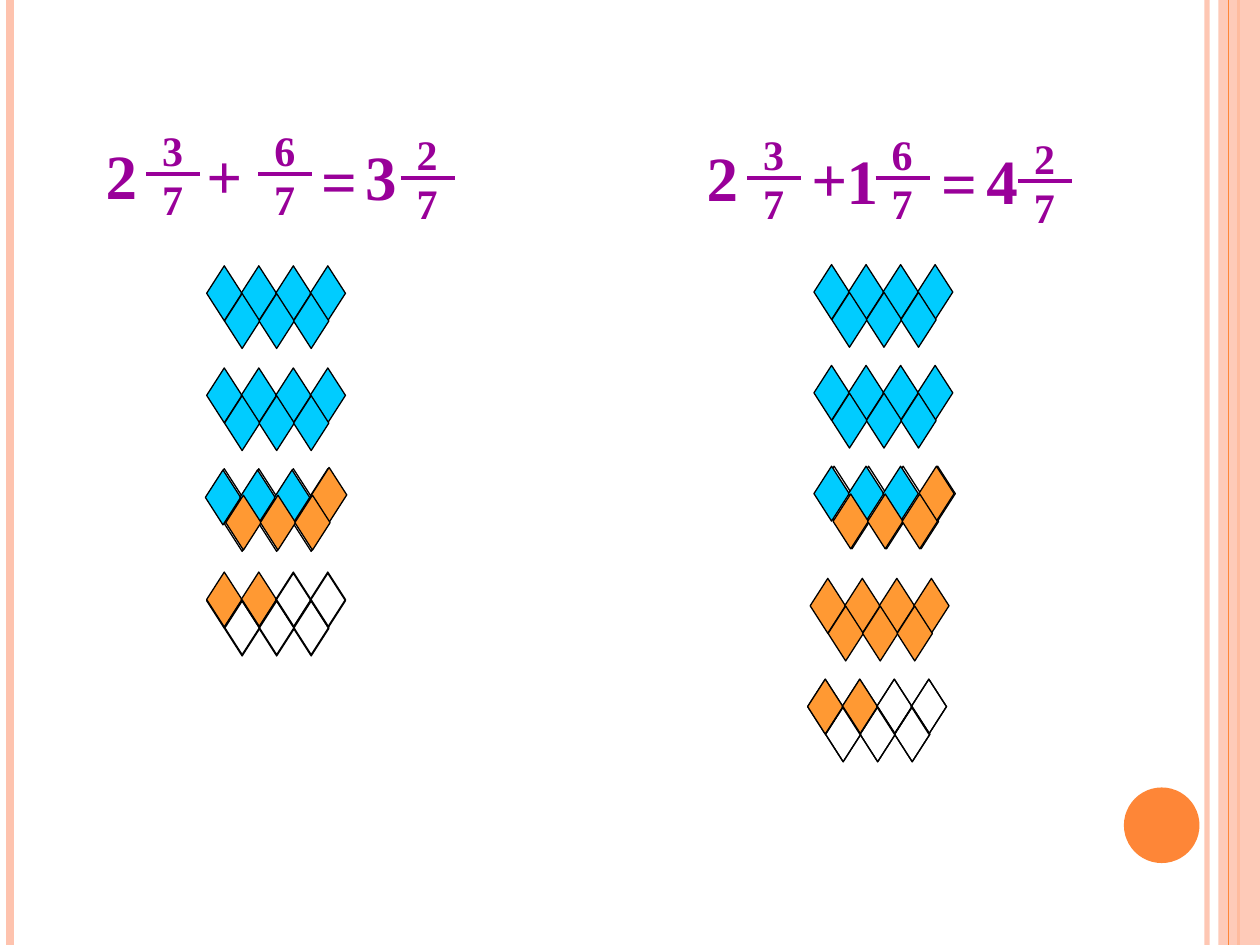
from dataclasses import dataclass
from typing import Optional

from lxml.etree import SubElement
from pptx import Presentation
from pptx.dml.color import RGBColor as Rgb
from pptx.enum.shapes import MSO_CONNECTOR as Link, MSO_SHAPE as Form
from pptx.enum.text import PP_ALIGN as Align
from pptx.oxml.ns import qn
from pptx.util import Inches, Pt

"""Draws two sums of mixed numbers on a grid of 100 columns by 75 rows."""

COLS, ROWS = 100, 75
CELL = Inches(0.1)


@dataclass(frozen=True)
class Theme:
    font: str = "Times New Roman"
    ink: str = "990099"
    edge: str = "000000"
    blue: str = "00CCFF"
    gold: str = "FF9933"
    white: str = "FFFFFF"
    pale: str = "FEC3AE"
    deep: str = "FE8637"
    big: int = 36
    small: int = 24


@dataclass(frozen=True)
class Stripe:
    col: float
    width: float
    color: str
    alpha: int = 100


@dataclass(frozen=True)
class Group:
    col: float
    row: float
    tiles: str


@dataclass(frozen=True)
class Sign:
    text: str
    col: float
    row: float
    width: float = 5.8


@dataclass(frozen=True)
class Ratio:
    top: str
    base: str
    col: float
    row: float


THEME = Theme()
FILLS = {"b": THEME.blue, "o": THEME.gold, "w": THEME.white, "-": None}

STRIPES = [
    Stripe(95.8, 3, THEME.pale, 93),
    Stripe(0.8, 4.5, THEME.pale),
    Stripe(98.3, 1.5, THEME.deep),
]
THIN = Stripe(97.5, 0.75, THEME.deep)

GROUPS = [
    Group(64.8, 37, "w" * 7),
    Group(16.4, 37.2, "w" * 7),
    Group(64.1, 53.9, "w" * 7),
    Group(16.4, 45.5, "w" * 7),
    Group(16.4, 21.1, "b" * 7),
    Group(16.4, 29.2, "b" * 7),
    Group(16.3, 37.3, "bbb"),
    Group(16.5, 37.1, "   oooo"),
    Group(16.4, 45.4, "oo-----"),
    Group(64.6, 21, "b" * 7),
    Group(64.6, 29, "b" * 7),
    Group(64.6, 37, "bbb"),
    Group(64.7, 37, "   oooo"),
    Group(64.3, 45.9, "o" * 7),
    Group(64.1, 53.9, "oo-----"),
]

SIGNS = [
    Sign("2", 7.4, 9.9),
    Sign("+", 15.4, 9.9),
    Sign("=", 24.5, 10.3, 5.1),
    Sign("3", 28, 10),
    Sign("2", 55.1, 10.1),
    Sign("+", 63.4, 10.2),
    Sign("1", 66.2, 10.3),
    Sign("=", 73.7, 10.5, 5.1),
    Sign("4", 77.3, 10.3),
]

RATIOS = [
    Ratio("3", "7", 11.6, 13.8),
    Ratio("6", "7", 20.5, 13.8),
    Ratio("2", "7", 31.8, 14.1),
    Ratio("3", "7", 59.3, 14.1),
    Ratio("6", "7", 69.5, 14.1),
    Ratio("2", "7", 80.8, 14.4),
]


def span(*cells: float) -> list[int]:
    return [round(n * CELL) for n in cells]


def fade(shape, alpha: int) -> None:
    if alpha < 100:
        tint = next(shape.element.iter(qn("a:srgbClr")))
        SubElement(tint, qn("a:alpha"), val=str(alpha * 1000))


def draw_line(slide, ends: tuple, color: str, width: float, alpha: int = 100) -> None:
    line = slide.shapes.add_connector(Link.STRAIGHT, *span(*ends))
    line.line.color.rgb = Rgb.from_string(color)
    line.line.width = Pt(width)
    fade(line, alpha)
    SubElement(line.element.spPr, qn("a:effectLst"))


def draw_form(slide, form, frame: tuple, fill: Optional[str],
              edge: Optional[str] = None, alpha: int = 100) -> None:
    shape = slide.shapes.add_shape(form, *span(*frame))
    shape.shadow.inherit = False
    if fill:
        shape.fill.solid()
        shape.fill.fore_color.rgb = Rgb.from_string(fill)
        fade(shape, alpha)
    else:
        shape.fill.background()
    if edge:
        shape.line.color.rgb = Rgb.from_string(edge)
        shape.line.width = Pt(0.75)
    else:
        shape.line.fill.background()


def draw_text(slide, text: str, frame: tuple, size: int, align=Align.LEFT) -> None:
    box = slide.shapes.add_textbox(*span(*frame)).text_frame
    box.word_wrap = True
    box.margin_top = Inches(0.09)
    para = box.paragraphs[0]
    para.text, para.alignment = text, align
    font = para.font
    font.name, font.size, font.bold = THEME.font, Pt(size), True
    font.color.rgb = Rgb.from_string(THEME.ink)


def draw_stripe(slide, stripe: Stripe) -> None:
    ends = (stripe.col, 0, stripe.col, ROWS)
    draw_line(slide, ends, stripe.color, stripe.width, stripe.alpha)


def draw_group(slide, group: Group) -> None:
    for i, tile in enumerate(group.tiles):
        if tile in FILLS:
            low, step = divmod(i, 4)
            col = group.col + 2.74 * step + 1.42 * low
            frame = (col, group.row + 2.2 * low, 2.8, 4.36)
            draw_form(slide, Form.DIAMOND, frame, FILLS[tile], THEME.edge)


def draw_ratio(slide, part: Ratio) -> None:
    col, row = part.col, part.row
    draw_text(slide, part.top, (col - 1, row - 4.8, 6.2, 5), THEME.small, Align.CENTER)
    draw_text(slide, part.base, (col - 0.7, row - 0.9, 5.6, 5), THEME.small, Align.CENTER)
    draw_line(slide, (col, row, col + 4.3, row), THEME.ink, 2.25)


def main() -> None:
    deck = Presentation()
    deck.slide_width, deck.slide_height = span(COLS, ROWS)
    slide = deck.slides.add_slide(deck.slide_layouts[6])
    for stripe in STRIPES:
        draw_stripe(slide, stripe)
    draw_form(slide, Form.RECTANGLE, (96.7, 0, 3.3, ROWS), THEME.pale, alpha=87)
    draw_stripe(slide, THIN)
    draw_form(slide, Form.OVAL, (89.2, 62.5, 6, 6), THEME.deep)
    for group in GROUPS:
        draw_group(slide, group)
    for sign in SIGNS:
        draw_text(slide, sign.text, (sign.col, sign.row, sign.width, 7), THEME.big)
    for part in RATIOS:
        draw_ratio(slide, part)
    deck.save("out.pptx")


if __name__ == "__main__":
    main()
